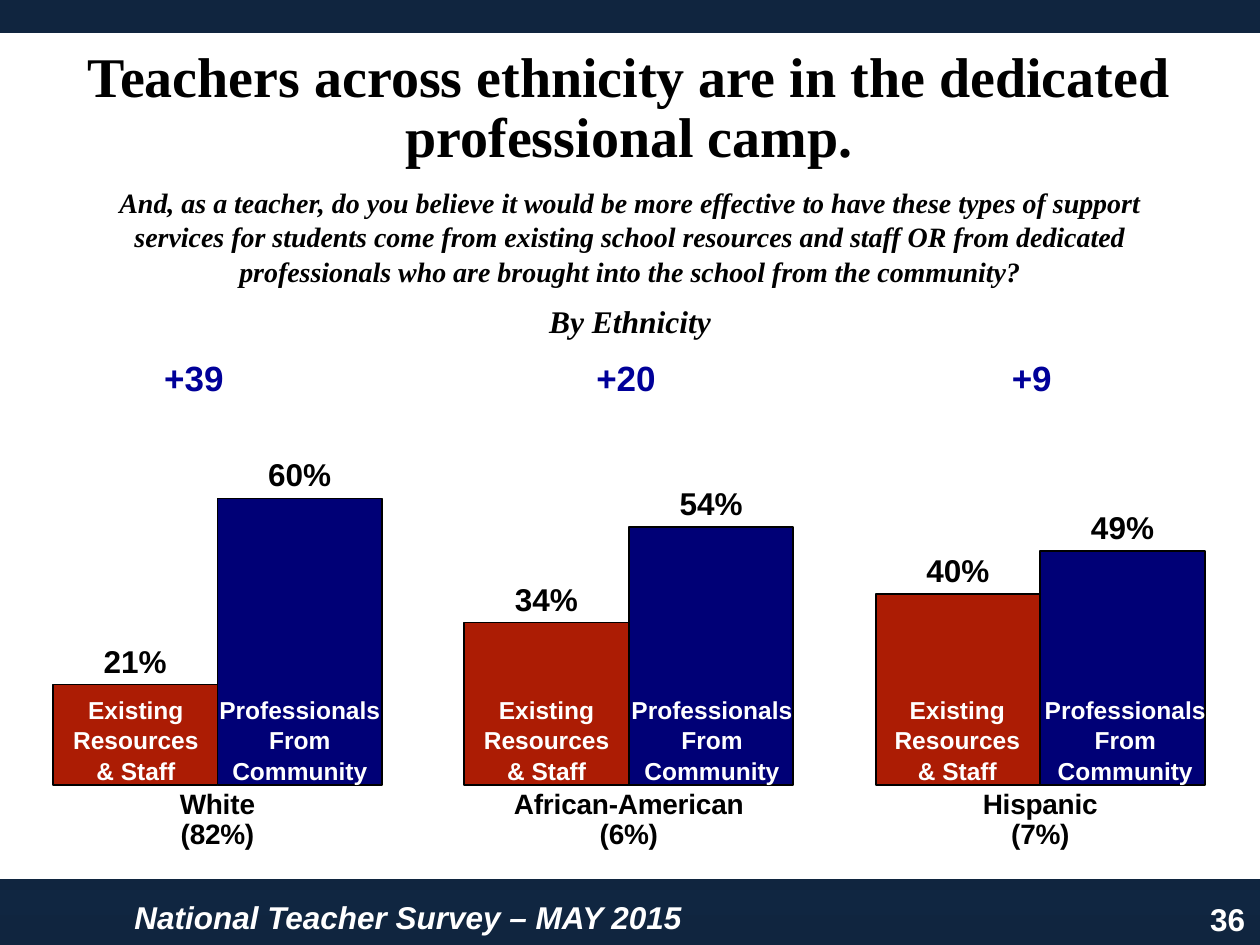
from copy import deepcopy

from lxml import etree
from pptx import Presentation
from pptx.chart.data import CategoryChartData
from pptx.dml.color import RGBColor
from pptx.enum.chart import XL_CHART_TYPE as ChartType
from pptx.enum.chart import XL_LABEL_POSITION as LabelPosition
from pptx.enum.chart import XL_TICK_LABEL_POSITION as TickLabels
from pptx.enum.chart import XL_TICK_MARK as TickMark
from pptx.enum.shapes import MSO_SHAPE as Shape
from pptx.enum.text import PP_ALIGN as Align
from pptx.oxml.ns import qn
from pptx.util import Cm, Pt

NAVY = RGBColor(0x10, 0x25, 0x3F)
NAVY_LIGHT = RGBColor(0x17, 0x37, 0x5E)
WHITE = RGBColor(0xFF, 0xFF, 0xFF)
BLACK = RGBColor(0, 0, 0)
RED = RGBColor(0xAC, 0x1C, 0x04)
BLUE = RGBColor(0, 0, 0x76)
MARGIN_BLUE = RGBColor(0, 0, 0x99)
SANS, SERIF = "Arial", "Times New Roman"

QUESTION = (
    "And, as a teacher, do you believe it would be more effective to have these types of support\n"
    "services for students come from existing school resources and staff OR from dedicated\n"
    "professionals who are brought into the school from the community?"
)
CATEGORIES = ["White\n(82%)", "African-American\n(6%)", "Hispanic\n(7%)"]
SERIES = [
    ("Existing Resources & Staff", [0.21, 0.34, 0.4], RED),
    ("Professionals From Community", [0.6, 0.54, 0.49], BLUE),
]
# Margin, then left edges of the margin, existing and professionals labels
GROUPS = [
    ("+39", 2.21, 0.76, 3.91),
    ("+20", 10.92, 9.04, 12.22),
    ("+9", 19.1, 17.32, 20.55),
]


def add_text(page, text, left, top, width, height, *, size, font=SANS,
             color=BLACK, italic=False, align=Align.CENTER, spacing=None):
    """Add a bold text box with one paragraph for each line of text."""
    box = page.shapes.add_textbox(Cm(left), Cm(top), Cm(width), Cm(height))
    frame = box.text_frame
    frame.word_wrap = True
    frame.text = text
    for para in frame.paragraphs:
        para.alignment = align
        if spacing:
            para.line_spacing = spacing
        for span in para.runs:
            span.font.name = font
            span.font.size = Pt(size)
            span.font.bold = True
            span.font.italic = italic
            span.font.color.rgb = color


def paint_background(page):
    fill = page.background.fill
    fill.gradient()
    fill.gradient_angle = 90
    stop_list = page.element.find(".//" + qn("a:gsLst"))
    stop_list.append(deepcopy(stop_list[-1]))
    colors = (NAVY, NAVY_LIGHT, NAVY)
    for stop, position, color in zip(fill.gradient_stops, (0, 0.5, 1), colors):
        stop.position = position
        stop.color.rgb = color


def add_panel(page):
    panel = page.shapes.add_shape(Shape.RECTANGLE, Cm(-0.25), Cm(0.56), Cm(25.88), Cm(17.27))
    panel.shadow.inherit = False
    panel.fill.solid()
    panel.fill.fore_color.rgb = WHITE
    panel.line.color.rgb = NAVY
    panel.line.width = Pt(6)


def place_plot(chart, x, y, w, h):
    """Fix the inner plot area as fractions of the chart."""
    plot_area = chart.element.find(".//" + qn("c:plotArea"))
    old_layout = plot_area.find(qn("c:layout"))
    if old_layout is not None:
        plot_area.remove(old_layout)
    layout = etree.Element(qn("c:layout"))
    manual = etree.SubElement(layout, qn("c:manualLayout"))
    settings = {"layoutTarget": "inner", "xMode": "edge", "yMode": "edge",
                "x": x, "y": y, "w": w, "h": h}
    for tag, value in settings.items():
        etree.SubElement(manual, qn("c:" + tag)).set("val", str(value))
    plot_area.insert(0, layout)


def style_axes(chart):
    for axis in (chart.category_axis, chart.value_axis):
        axis.has_major_gridlines = False
        axis.major_tick_mark = axis.minor_tick_mark = TickMark.NONE
        axis.format.line.fill.background()
    names = chart.category_axis.tick_labels.font
    names.name, names.size, names.bold = SANS, Pt(16), True
    names.color.rgb = BLACK
    scale = chart.value_axis
    scale.minimum_scale, scale.maximum_scale, scale.major_unit = 0, 1.05, 0.1
    scale.tick_label_position = TickLabels.NONE


def style_series(series, color):
    series.format.fill.solid()
    series.format.fill.fore_color.rgb = color
    series.format.line.color.rgb = BLACK
    series.format.line.width = Pt(1)
    labels = series.data_labels
    labels.show_value = True
    labels.number_format = "0%"
    labels.number_format_is_linked = False
    labels.position = LabelPosition.OUTSIDE_END
    labels.font.name, labels.font.size, labels.font.bold = SANS, Pt(18), True
    labels.font.color.rgb = BLACK


def add_bars(page):
    data = CategoryChartData(number_format="0%")
    data.categories = CATEGORIES
    for name, values, _ in SERIES:
        data.add_series(name, values)
    chart = page.shapes.add_chart(ChartType.COLUMN_CLUSTERED, Cm(-0.15), Cm(-0.51),
                                  Cm(25.68), Cm(18.54), data).chart
    chart.has_title = chart.has_legend = False
    chart.font.name, chart.font.size = SANS, Pt(18)
    chart.font.color.rgb = BLACK
    plot = chart.plots[0]
    plot.gap_width, plot.overlap = 50, 0
    plot.vary_by_categories = False
    place_plot(chart, 0.015, 0.336, 0.969, 0.545)
    style_axes(chart)
    for series, (_, _, color) in zip(plot.series, SERIES):
        style_series(series, color)


def add_group_labels(page):
    bar_format = dict(size=14, color=WHITE, spacing=1.05)
    for margin, margin_left, existing_left, professionals_left in GROUPS:
        add_text(page, margin, margin_left, 7.06, 3.4, 1.12, size=20, color=MARGIN_BLUE)
        add_text(page, "Existing\nResources\n& Staff",
                 existing_left, 13.85, 3.96, 2.06, **bar_format)
        add_text(page, "Professionals From\nCommunity",
                 professionals_left, 13.85, 4.27, 2.06, **bar_format)


def main():
    deck = Presentation()
    deck.slide_width, deck.slide_height = Cm(25.4), Cm(19.05)
    page = deck.slides.add_slide(deck.slide_layouts[6])

    # Frame and footer
    paint_background(page)
    add_panel(page)
    add_text(page, "36", 22.81, 18.01, 2.54, 1.02, size=18, color=WHITE, align=Align.RIGHT)
    add_text(page, "National Teacher Survey – MAY 2015", 2.46, 17.98, 19.84, 1.02,
             size=18, color=WHITE, italic=True, align=Align.LEFT)

    # Chart and the labels over it
    add_bars(page)
    add_group_labels(page)

    # Headings
    add_text(page, "Teachers across ethnicity are in the dedicated professional camp.",
             -0.28, 0.88, 25.93, 2.59, size=32, font=SERIF, spacing=0.89)
    add_text(page, QUESTION, 0, 3.58, 25.4, 2.39, size=16, font=SERIF,
             italic=True, spacing=1.04)
    add_text(page, "By Ethnicity", -0.28, 5.97, 25.96, 1.02, size=18, font=SERIF, italic=True)

    deck.save("out.pptx")


if __name__ == "__main__":
    main()
